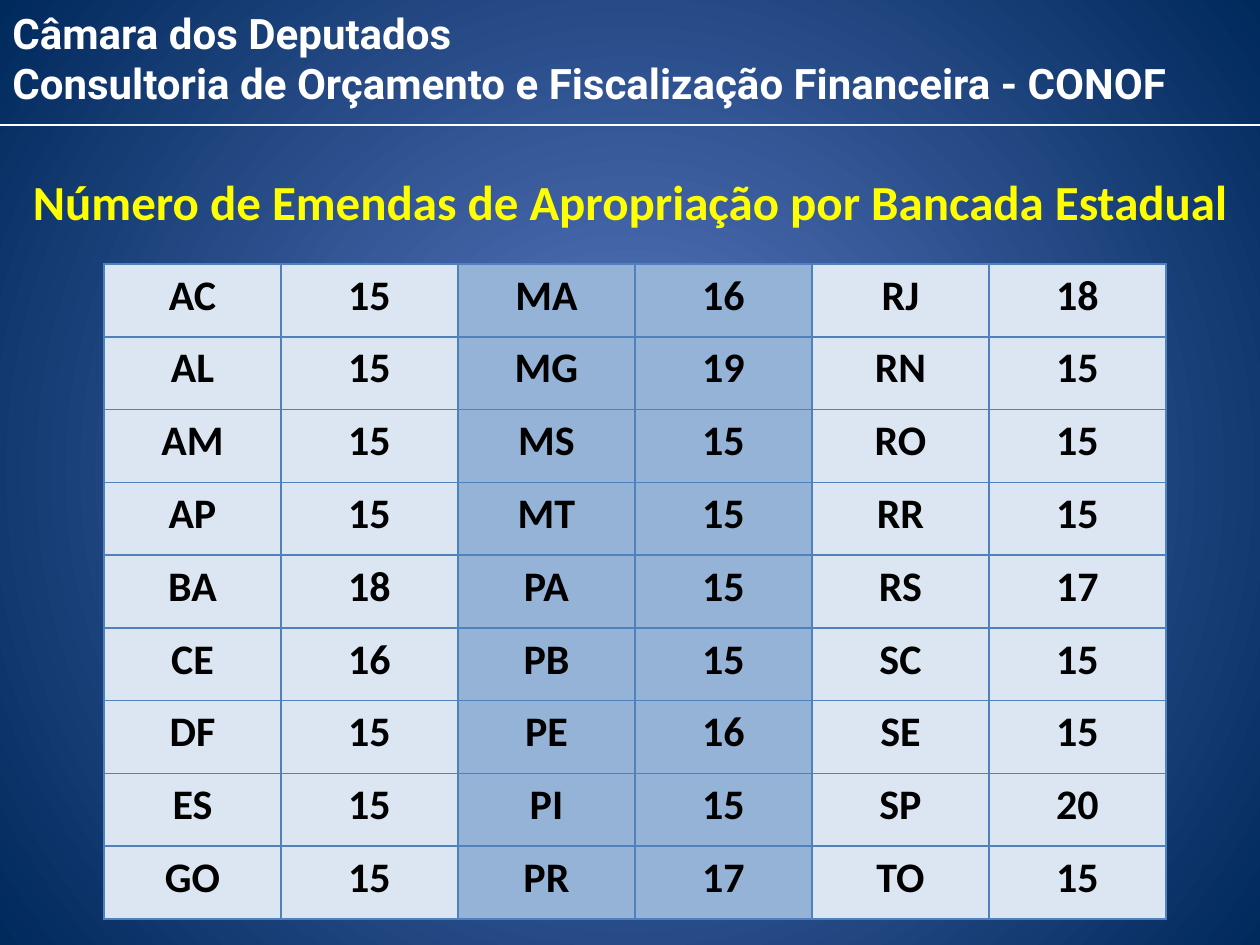
from lxml.etree import SubElement
from pptx import Presentation
from pptx.dml.color import RGBColor
from pptx.enum.shapes import MSO_CONNECTOR
from pptx.enum.text import PP_ALIGN
from pptx.oxml.ns import qn
from pptx.util import Emu, Pt

SCALE = 914400 // 126
COLORS = {
    "center": "5E7CC5", "edge": "00295C", "title": "FFFF00", "white": "FFFFFF",
    "black": "000000", "pale": "DCE6F2", "blue": "95B3D7", "border": "4F81BD",
}
HEADER = "Câmara dos Deputados\nConsultoria de Orçamento e Fiscalização Financeira - CONOF"
TITLE = "Número de Emendas de Apropriação por Bancada Estadual"
ROWS = [
    ("AC", 15, "MA", 16, "RJ", 18),
    ("AL", 15, "MG", 19, "RN", 15),
    ("AM", 15, "MS", 15, "RO", 15),
    ("AP", 15, "MT", 15, "RR", 15),
    ("BA", 18, "PA", 15, "RS", 17),
    ("CE", 16, "PB", 15, "SC", 15),
    ("DF", 15, "PE", 16, "SE", 15),
    ("ES", 15, "PI", 15, "SP", 20),
    ("GO", 15, "PR", 17, "TO", 15),
]
FILLS = ["pale", "pale", "blue", "blue", "pale", "pale"]


def px(*sizes):
    return [Emu(size * SCALE) for size in sizes]


def color(name):
    return RGBColor.from_string(COLORS[name])


def write(frame, text, size, font, tint, align):
    frame.text = text
    for para in frame.paragraphs:
        para.alignment = align
        for run in para.runs:
            run.font.size = Pt(size)
            run.font.name = font
            run.font.bold = True
            run.font.color.rgb = color(tint)


def add_glow(slide):
    fill = slide.background.fill
    fill.gradient()
    for stop, name, place in zip(fill.gradient_stops, ("center", "edge"), (0, 1)):
        stop.color.rgb = color(name)
        stop.position = place
    grad = slide.element.find(".//" + qn("a:gradFill"))
    grad.remove(grad.find(qn("a:lin")))
    ring = SubElement(grad, qn("a:path"), path="circle")
    SubElement(ring, qn("a:fillToRect"), l="50000", t="50000", r="50000", b="50000")


def add_text(slide, box, text, size, font, tint, align):
    frame = slide.shapes.add_textbox(*px(*box)).text_frame
    frame.word_wrap = True
    write(frame, text, size, font, tint, align)


def add_rule(slide, ends):
    rule = slide.shapes.add_connector(MSO_CONNECTOR.STRAIGHT, *px(*ends))
    rule.line.color.rgb = color("white")
    rule.line.width = Pt(1.5)
    SubElement(rule.element.spPr, qn("a:effectLst"))


def add_border(cell):
    props = cell._tc.get_or_add_tcPr()
    for side in ("a:lnL", "a:lnR", "a:lnT", "a:lnB"):
        line = SubElement(props, qn(side), w=str(Pt(1)))
        fill = SubElement(line, qn("a:solidFill"))
        SubElement(fill, qn("a:srgbClr"), val=COLORS["border"])


def add_grid(slide, box, rows):
    table = slide.shapes.add_table(len(rows), len(FILLS), *px(*box)).table
    table.first_row = False
    table.horz_banding = False
    for y, row in enumerate(rows):
        for x, value in enumerate(row):
            cell = table.cell(y, x)
            write(cell.text_frame, str(value), 24, "Calibri", "black", PP_ALIGN.CENTER)
            add_border(cell)
            cell.fill.solid()
            cell.fill.fore_color.rgb = color(FILLS[x])


def main():
    deck = Presentation()
    deck.slide_width, deck.slide_height = px(1260, 945)
    slide = deck.slides.add_slide(deck.slide_layouts[6])
    add_glow(slide)
    add_text(slide, (0, 165, 1260, 674), TITLE, 28, "Calibri", "title", PP_ALIGN.CENTER)
    add_grid(slide, (104, 264, 1062, 655), ROWS)
    add_text(slide, (0, 1, 1260, 115), HEADER, 24, "Roboto", "white", PP_ALIGN.LEFT)
    add_rule(slide, (1260, 125, 0, 125))
    deck.save("out.pptx")


if __name__ == "__main__":
    main()
